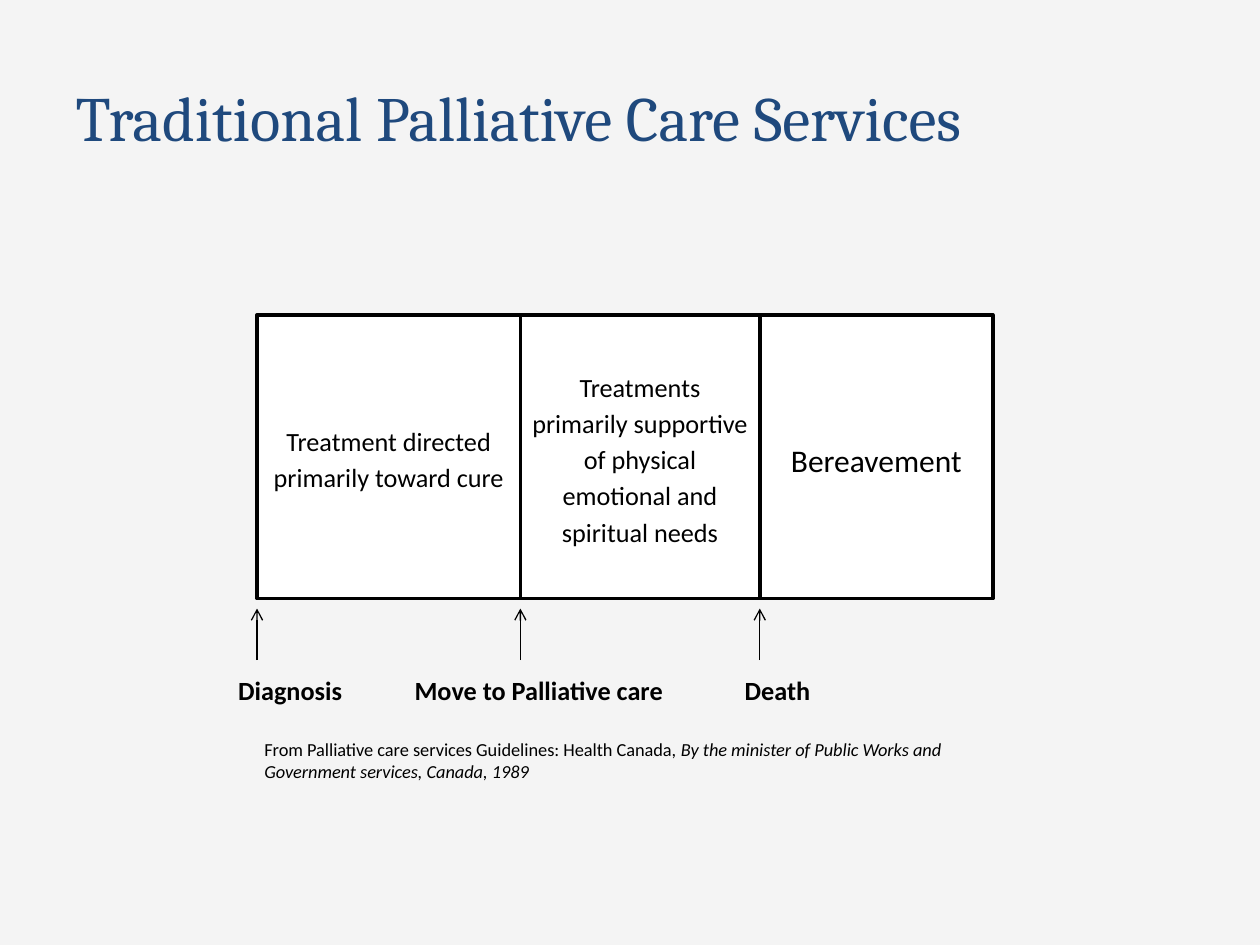
from dataclasses import dataclass

from lxml.etree import SubElement
from pptx import Presentation
from pptx.dml.color import RGBColor
from pptx.enum.shapes import MSO_CONNECTOR as Connector, MSO_SHAPE as Shape
from pptx.enum.text import MSO_ANCHOR as Anchor, PP_ALIGN as Align
from pptx.oxml.ns import qn
from pptx.slide import Slide
from pptx.text.text import TextFrame
from pptx.util import Inches, Pt


@dataclass(frozen=True)
class Theme:
    """Colours, fonts and type sizes of the slide."""
    backdrop: RGBColor = RGBColor(0xF4, 0xF4, 0xF4)
    heading: RGBColor = RGBColor(0x1F, 0x49, 0x7D)
    ink: RGBColor = RGBColor(0, 0, 0)
    panel: RGBColor = RGBColor(255, 255, 255)
    heading_font: str = "Cambria"
    text_font: str = "Calibri"
    heading_size: float = 36
    large_size: float = 18
    text_size: float = 15
    source_size: float = 10.5


@dataclass(frozen=True)
class Phase:
    """A stage of care and the event that opens it."""
    text: str
    width: float
    size: float
    event: str
    event_tab: float


THEME = Theme()
PHASES = (
    Phase("Treatment directed primarily toward cure", 2.09, THEME.text_size,
          "Diagnosis", 0),
    Phase("Treatments primarily supportive of physical emotional and spiritual needs",
          1.9, THEME.text_size, "Move to Palliative care", 1.4),
    Phase("Bereavement", 1.85, THEME.large_size, "Death", 4.02),
)
PHASES_LEFT, PHASES_TOP, PHASES_HEIGHT = 2.04, 2.5, 2.25


def set_font(font, size: float, name: str = THEME.text_font,
             color: RGBColor = THEME.ink) -> None:
    """Set the face, size and colour of a font."""
    font.name, font.size, font.color.rgb = name, Pt(size), color


def set_insets(frame: TextFrame, top: float = 0.04) -> None:
    """Give a frame narrow margins and centre its text vertically."""
    frame.word_wrap = True
    frame.vertical_anchor = Anchor.MIDDLE
    frame.margin_left = frame.margin_right = Inches(0.07)
    frame.margin_top, frame.margin_bottom = Inches(top), Inches(0.04)


def add_title(page: Slide, text: str) -> None:
    """Place the heading in the title placeholder."""
    title = page.shapes.title
    title.left, title.top = Inches(0.5), Inches(0.3)
    title.width, title.height = Inches(9), Inches(1.25)
    title.text_frame.vertical_anchor = Anchor.MIDDLE
    para = title.text_frame.paragraphs[0]
    para.text, para.alignment = text, Align.LEFT
    set_font(para.font, THEME.heading_size, THEME.heading_font, THEME.heading)


def add_phase(page: Slide, phase: Phase, left: float) -> None:
    """Draw one outlined panel with its description."""
    box = page.shapes.add_shape(Shape.RECTANGLE, Inches(left), Inches(PHASES_TOP),
                                Inches(phase.width), Inches(PHASES_HEIGHT))
    box.shadow.inherit = False
    box.fill.solid()
    box.fill.fore_color.rgb = THEME.panel
    box.line.color.rgb, box.line.width = THEME.ink, Pt(2)
    set_insets(box.text_frame)
    para = box.text_frame.paragraphs[0]
    para.text, para.alignment = phase.text, Align.CENTER
    para.line_spacing, para.space_after = 1.15, Pt(7.5)
    set_font(para.font, phase.size)


def add_arrow(page: Slide, x: float) -> None:
    """Draw an upward arrow to the start of a phase."""
    arrow = page.shapes.add_connector(Connector.STRAIGHT, Inches(x), Inches(5.24),
                                      Inches(x), Inches(4.83))
    arrow.line.color.rgb, arrow.line.width = THEME.ink, Pt(0.75)
    properties = arrow._element.spPr
    SubElement(properties.find(qn("a:ln")), qn("a:tailEnd"), type="arrow")
    SubElement(properties, qn("a:effectLst"))


def add_events(page: Slide) -> None:
    """Write the event names on one line, aligned by tab stops."""
    box = page.shapes.add_textbox(Inches(1.82), Inches(4.92), Inches(5.81), Inches(0.9))
    set_insets(box.text_frame, top=0.26)
    para = box.text_frame.paragraphs[0]
    para.text = "\t".join(phase.event for phase in PHASES)
    tabs = SubElement(para._p.get_or_add_pPr(), qn("a:tabLst"))
    for phase in PHASES[1:]:
        SubElement(tabs, qn("a:tab"), pos=str(Inches(phase.event_tab)), algn="l")
    set_font(para.font, THEME.text_size)
    para.font.bold = True


def add_source(page: Slide) -> None:
    """Write the reference with its publisher in italics."""
    box = page.shapes.add_textbox(Inches(2), Inches(5.81), Inches(5.63), Inches(0.45))
    box.text_frame.word_wrap = True
    para = box.text_frame.paragraphs[0]
    para.add_run().text = "From Palliative care services Guidelines: Health Canada, "
    span = para.add_run()
    span.text = "By the minister of Public Works and Government services, Canada, 1989"
    span.font.italic = True
    set_font(para.font, THEME.source_size)


def main() -> None:
    """Build and save the slide."""
    deck = Presentation()
    deck.slide_width, deck.slide_height = Inches(10), Inches(7.5)
    page = deck.slides.add_slide(deck.slide_layouts[5])
    page.background.fill.solid()
    page.background.fill.fore_color.rgb = THEME.backdrop
    add_title(page, "Traditional Palliative Care Services")
    left = PHASES_LEFT
    for phase in PHASES:
        add_phase(page, phase, left)
        add_arrow(page, left)
        left += phase.width
    add_events(page)
    add_source(page)
    deck.save("out.pptx")


if __name__ == "__main__":
    main()
